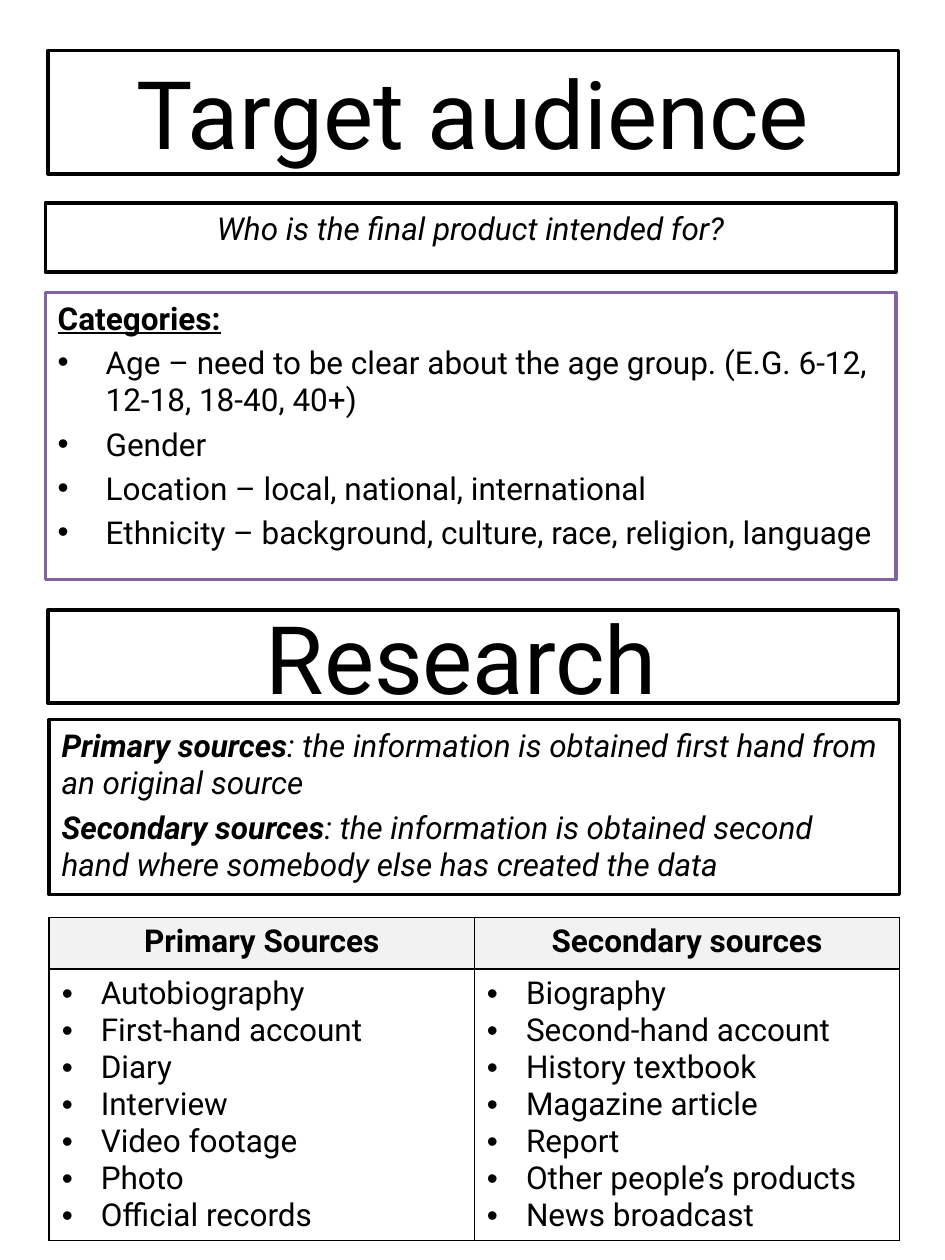
from lxml import etree
from pptx import Presentation
from pptx.dml.color import RGBColor
from pptx.enum.shapes import MSO_SHAPE as Shape
from pptx.enum.text import MSO_ANCHOR as Anchor, PP_ALIGN as Align
from pptx.oxml.ns import qn
from pptx.util import Inches, Pt

BLACK = RGBColor(0x00, 0x00, 0x00)
WHITE = RGBColor(0xFF, 0xFF, 0xFF)
PURPLE = RGBColor(0x80, 0x64, 0xA2)
GREY = RGBColor(0xF2, 0xF2, 0xF2)
BASE = {"name": "Roboto", "size": Pt(18), "bold": False, "italic": False}
BOLD = {"bold": True}
ITALIC = {"italic": True}
HEAD = {"bold": True, "underline": True}
BIG = {"size": Pt(54)}
GAP = Pt(3.6)

AIMS = [
    "Age – need to be clear about the age group. (E.G. 6-12, 12-18, 18-40, 40+)",
    "Gender",
    "Location – local, national, international",
    "Ethnicity – background, culture, race, religion, language",
]
TERMS = {
    "Primary sources": ": the information is obtained first hand from an original source",
    "Secondary sources": ": the information is obtained second hand where somebody else has created the data",
}
LISTS = {
    "Primary Sources": [
        "Autobiography", "First-hand account", "Diary", "Interview",
        "Video footage", "Photo", "Official records",
    ],
    "Secondary sources": [
        "Biography", "Second-hand account", "History textbook", "Magazine article",
        "Report", "Other people’s products", "News broadcast",
    ],
}


def add_bullet(para, indent):
    props = para._p.get_or_add_pPr()
    props.set("marL", str(indent))
    props.set("indent", str(-indent))
    etree.SubElement(props, qn("a:buFont")).set("typeface", "Arial")
    etree.SubElement(props, qn("a:buChar")).set("char", "•")


def write(frame, lines, align=Align.LEFT, gap=Pt(0)):
    for i, (runs, indent) in enumerate(lines):
        para = frame.add_paragraph() if i else frame.paragraphs[0]
        para.alignment = align
        para.space_before = gap
        if indent:
            add_bullet(para, indent)
        for text, style in runs:
            run = para.add_run()
            run.text = text
            run.font.color.rgb = BLACK
            for key, value in {**BASE, **style}.items():
                setattr(run.font, key, value)


def add_box(slide, box, edge=BLACK, anchor=Anchor.TOP):
    shape = slide.shapes.add_shape(Shape.RECTANGLE, *map(Inches, box))
    shape.shadow.inherit = False
    shape.fill.solid()
    shape.fill.fore_color.rgb = WHITE
    shape.line.color.rgb = edge
    shape.line.width = Pt(2)
    frame = shape.text_frame
    frame.word_wrap = True
    frame.vertical_anchor = anchor
    return frame


def add_title(slide, box, text):
    frame = add_box(slide, box, anchor=Anchor.MIDDLE)
    write(frame, [([(text, BIG)], 0)], Align.CENTER)


def add_prompt(slide, box):
    text = "Who is the final product intended for?"
    write(add_box(slide, box), [([(text, ITALIC)], 0)], Align.CENTER, GAP)


def add_aims(slide, box):
    lines = [([("Categories:", HEAD)], 0)]
    lines += [([(text, {})], Inches(0.38)) for text in AIMS]
    write(add_box(slide, box, PURPLE), lines, gap=GAP)


def add_terms(slide, box):
    lines = [
        ([(term, {**BOLD, **ITALIC}), (text, ITALIC)], 0)
        for term, text in TERMS.items()
    ]
    write(add_box(slide, box), lines, gap=GAP)


def style_cell(cell, color):
    cell.fill.solid()
    cell.fill.fore_color.rgb = color
    props = cell._tc.get_or_add_tcPr()
    for i, side in enumerate("LRTB"):
        line = etree.Element(qn(f"a:ln{side}"), w=str(Pt(1)))
        fill = etree.SubElement(line, qn("a:solidFill"))
        etree.SubElement(fill, qn("a:srgbClr")).set("val", str(BLACK))
        props.insert(i, line)


def add_lists(slide, box):
    table = slide.shapes.add_table(2, len(LISTS), *map(Inches, box)).table
    top = 0.41
    table.rows[0].height = Inches(top)
    table.rows[1].height = Inches(box[3] - top)
    for col, (head, items) in enumerate(LISTS.items()):
        name, body = table.cell(0, col), table.cell(1, col)
        style_cell(name, GREY)
        style_cell(body, WHITE)
        write(name.text_frame, [([(head, BOLD)], 0)], Align.CENTER)
        write(body.text_frame, [([(item, {})], Inches(0.31)) for item in items])


def main():
    deck = Presentation()
    deck.slide_width, deck.slide_height = Inches(7.5), Inches(10)
    slide = deck.slides.add_slide(deck.slide_layouts[6])
    add_title(slide, (0.38, 0.4, 6.75, 0.98), "Target audience")
    add_prompt(slide, (0.36, 1.61, 6.75, 0.55))
    add_aims(slide, (0.36, 2.32, 6.75, 2.28))
    add_title(slide, (0.38, 4.84, 6.75, 0.74), "Research ")
    add_terms(slide, (0.39, 5.71, 6.75, 1.39))
    add_lists(slide, (0.39, 7.28, 6.75, 2.56))
    deck.save("out.pptx")


if __name__ == "__main__":
    main()
